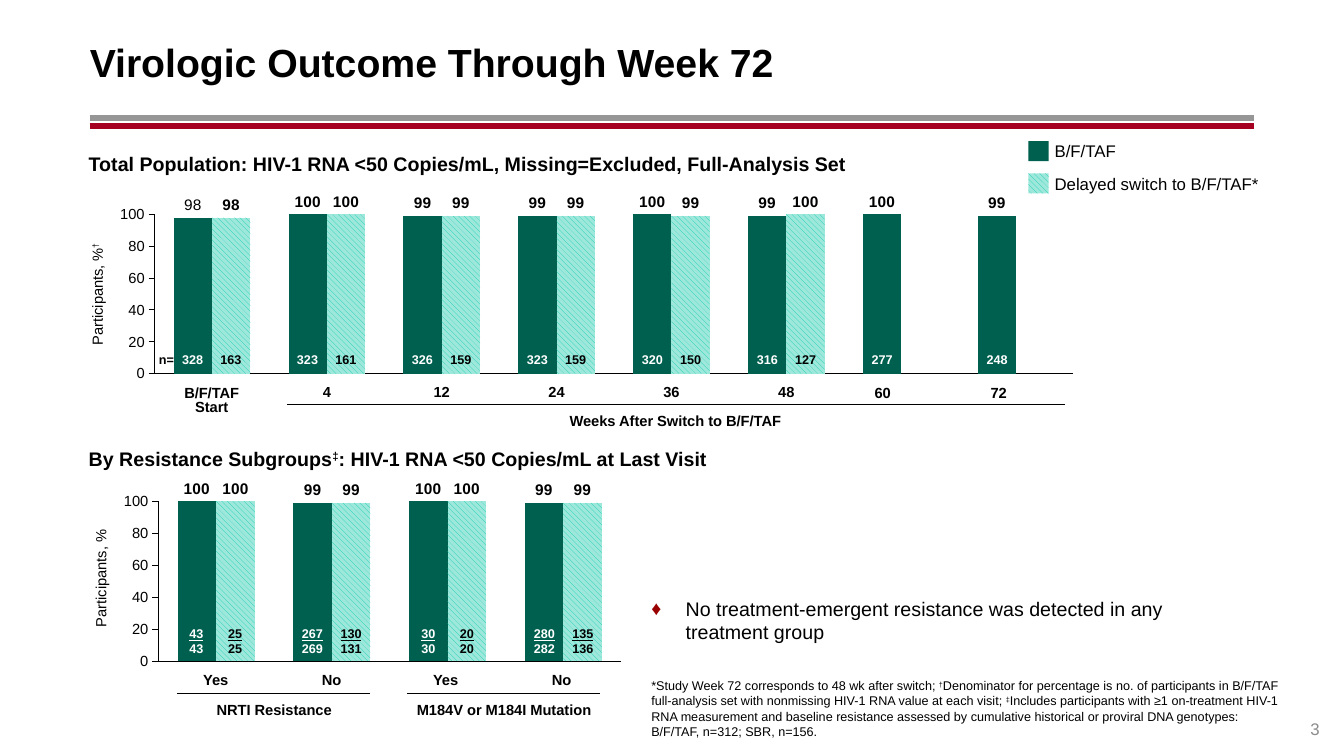
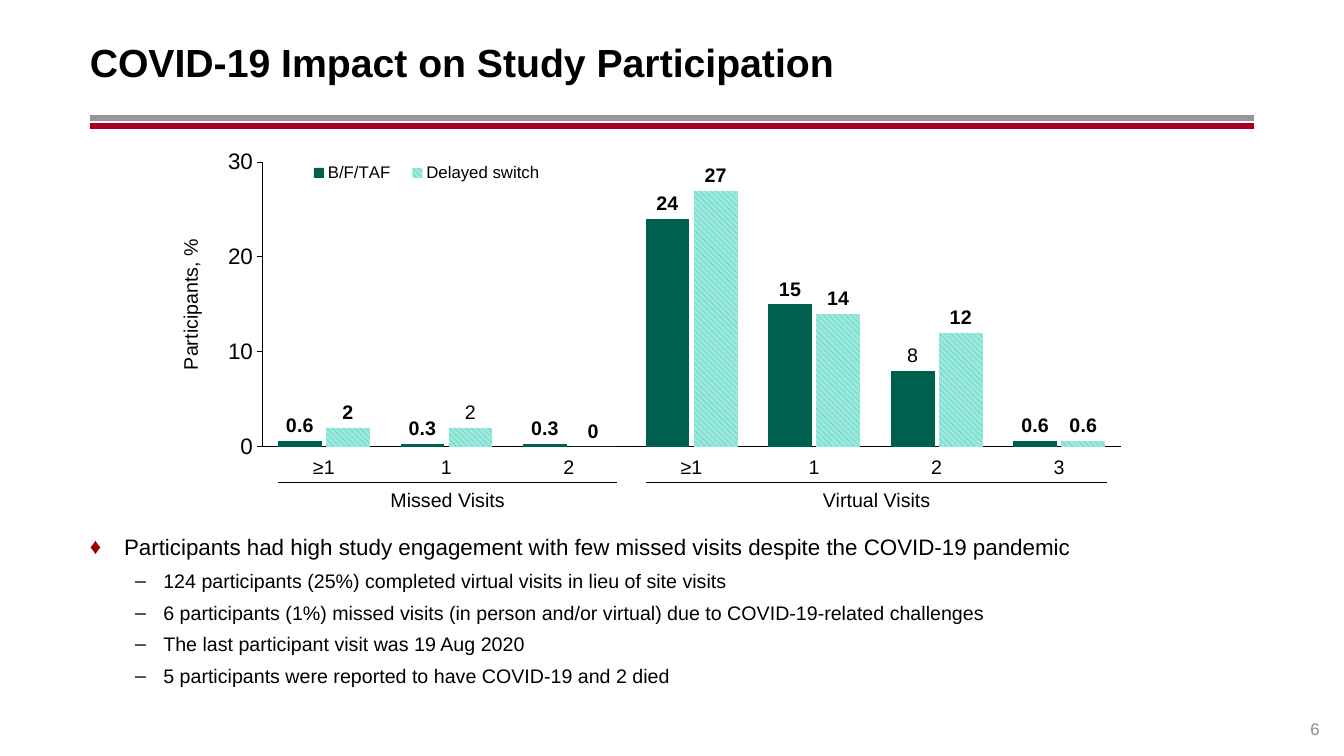
from itertools import groupby

from lxml import etree
from pptx import Presentation
from pptx.chart.data import CategoryChartData
from pptx.dml.color import RGBColor
from pptx.enum.chart import XL_CHART_TYPE, XL_LABEL_POSITION, XL_LEGEND_POSITION
from pptx.enum.chart import XL_TICK_LABEL_POSITION, XL_TICK_MARK
from pptx.enum.dml import MSO_PATTERN
from pptx.enum.shapes import MSO_CONNECTOR, MSO_SHAPE
from pptx.enum.text import MSO_ANCHOR, MSO_AUTO_SIZE, PP_ALIGN
from pptx.oxml.ns import qn
from pptx.util import Inches, Pt

LEFT, CENTER, RIGHT = PP_ALIGN.LEFT, PP_ALIGN.CENTER, PP_ALIGN.RIGHT
TOP, MIDDLE, BOTTOM = MSO_ANCHOR.TOP, MSO_ANCHOR.MIDDLE, MSO_ANCHOR.BOTTOM
HATCH = MSO_PATTERN.WIDE_DOWNWARD_DIAGONAL
COLUMNS, OUTSIDE_END = XL_CHART_TYPE.COLUMN_CLUSTERED, XL_LABEL_POSITION.OUTSIDE_END
LABELS_LOW, LABELS_OFF = XL_TICK_LABEL_POSITION.LOW, XL_TICK_LABEL_POSITION.NONE
TICK_OUT, TICK_OFF = XL_TICK_MARK.OUTSIDE, XL_TICK_MARK.NONE

FONT = "Arial"
COLORS = {
    "ink": "000000", "paper": "FFFFFF", "gray": "969696", "red": "A50021", "number": "8C8C8C",
    "bullet": "990000", "green": "006050", "mint": "9DE7DB", "stripe": "0CCEAE",
}
SUPERSCRIPTS = "†‡"


def color(name):
    return RGBColor.from_string(COLORS[name])


def style_font(font, size, bold=False, ink="ink"):
    font.name, font.size, font.bold = FONT, Pt(size), bold
    font.color.rgb = color(ink)


def paint(fill, name):
    """Fill with a named colour, or with mint stripes for "hatch"."""
    if name == "hatch":
        fill.patterned()
        fill.pattern = HATCH
        fill.fore_color.rgb, fill.back_color.rgb = color("stripe"), color("mint")
    else:
        fill.solid()
        fill.fore_color.rgb = color(name)


def write(frame, *lines, size=10.5, bold=False, ink="ink", align=LEFT, anchor=TOP, wrap=True,
          spacing=None, before=None):
    """Fill a text frame, one paragraph a line; daggers are raised."""
    frame.word_wrap, frame.vertical_anchor, frame.auto_size = wrap, anchor, MSO_AUTO_SIZE.NONE
    frame.margin_left = frame.margin_top = frame.margin_right = frame.margin_bottom = 0
    for index, line in enumerate(lines):
        para = frame.add_paragraph() if index else frame.paragraphs[0]
        para.alignment, para.line_spacing = align, spacing
        para.space_before = None if before is None else Pt(before)
        for raised, letters in groupby(line, key=lambda letter: letter in SUPERSCRIPTS):
            span = para.add_run()
            span.text = "".join(letters)
            style_font(span.font, size, bold, ink)
            if raised:
                span._r.get_or_add_rPr().set("baseline", "30000")


def add_bullet(para, mark, margin, hang, ink="ink"):
    properties = para._p.get_or_add_pPr()
    properties.set("marL", str(Inches(margin)))
    properties.set("indent", str(-Inches(hang)))
    tint = etree.SubElement(properties, qn("a:buClr"))
    etree.SubElement(tint, qn("a:srgbClr"), val=COLORS[ink])
    etree.SubElement(properties, qn("a:buFont"), typeface=FONT)
    etree.SubElement(properties, qn("a:buChar"), char=mark)


def place(element, index, area, inner=False):
    """Fix a plot area or legend at fractions of its chart."""
    for old in element.findall(qn("c:layout")):
        element.remove(old)
    layout = etree.Element(qn("c:layout"))
    manual = etree.SubElement(layout, qn("c:manualLayout"))
    if inner:
        etree.SubElement(manual, qn("c:layoutTarget"), val="inner")
    for tag in ("xMode", "yMode"):
        etree.SubElement(manual, qn("c:" + tag), val="edge")
    for tag, value in zip("xywh", area):
        etree.SubElement(manual, qn("c:" + tag), val=str(value))
    element.insert(index, layout)


class SlideBuilder:
    def __init__(self):
        self.deck = Presentation()
        self.deck.slide_width, self.deck.slide_height = Inches(13.33), Inches(7.5)
        self.page = None

    def new_page(self, title, number):
        self.page = self.deck.slides.add_slide(self.deck.slide_layouts[5])
        for top, name in ((1.17, "gray"), (1.25, "red")):
            self.rule(0.89, 12.44, top, name, 4.25)
        heading = self.page.shapes.title
        heading.left, heading.top = Inches(0.89), Inches(0.18)
        heading.width, heading.height = Inches(11.55), Inches(0.86)
        write(heading.text_frame, title, size=28, bold=True, anchor=MIDDLE)
        self.text(number, at=(12.44, 6.93, 0.65, 0.4), size=12, ink="number", align=RIGHT, anchor=BOTTOM)

    def rule(self, left, right, top, name="ink", width=0.75):
        ends = map(Inches, (left, top, right, top))
        line = self.page.shapes.add_connector(MSO_CONNECTOR.STRAIGHT, *ends)
        line.line.color.rgb, line.line.width = color(name), Pt(width)
        etree.SubElement(line._element.spPr, qn("a:effectLst"))

    def text(self, *lines, at, rotation=0, **style):
        box = self.page.shapes.add_textbox(*map(Inches, at))
        box.rotation = rotation
        write(box.text_frame, *lines, **style)
        return box.text_frame

    def caption(self, *lines, center, top, width=1, height=0.18, **style):
        at = (center - width / 2, top, width, height)
        return self.text(*lines, at=at, align=CENTER, anchor=MIDDLE, wrap=False, **style)

    def block(self, *lines, at, name="paper", **style):
        shape = self.page.shapes.add_shape(MSO_SHAPE.RECTANGLE, *map(Inches, at))
        shape.shadow.inherit = False
        shape.line.fill.background()
        paint(shape.fill, name)
        write(shape.text_frame, *lines, align=CENTER, wrap=False, **style)

    def counts(self, first, step, top, pairs):
        """Write the participant counts at the foot of each pair of bars."""
        for index, pair in enumerate(pairs):
            for side, ink, lines in zip((-1, 1), ("paper", "ink"), pair):
                frame = self.caption(*lines, center=first + step * index + side * step / 6, top=top,
                                     width=0.38, height=0.15 * len(lines), size=9, bold=True, ink=ink)
                frame.paragraphs[0].runs[0].font.underline = len(lines) > 1

    def chart(self, at, plot_area, categories, series, top_value, step, gap=100, overlap=0,
              label_size=11, label_format="#,##0", value_size=10.5, category_size=10.5,
              category_bold=False, category_labels=LABELS_LOW, category_offset=100,
              plain_labels=(), legend_area=None):
        data = CategoryChartData()
        data.categories = categories
        for name, values in series.items():
            data.add_series(name, values)
        chart = self.page.shapes.add_chart(COLUMNS, *map(Inches, at), data).chart
        style_font(chart.font, 10)
        chart.has_title, chart.has_legend = False, legend_area is not None
        if chart.has_legend:
            legend = chart.legend
            legend.position, legend.include_in_layout = XL_LEGEND_POSITION.BOTTOM, False
            style_font(legend.font, 12)
            place(legend._element, 1, legend_area)
        place(chart._chartSpace.chart.plotArea, 0, plot_area, inner=True)

        # Axes
        across, upward = chart.category_axis, chart.value_axis
        for axis, size, bold, tick in ((across, category_size, category_bold, TICK_OFF),
                                       (upward, value_size, False, TICK_OUT)):
            axis.has_major_gridlines = False
            axis.major_tick_mark, axis.minor_tick_mark = tick, TICK_OFF
            axis.format.line.color.rgb, axis.format.line.width = color("ink"), Pt(0.75)
            style_font(axis.tick_labels.font, size, bold)
        across.tick_label_position, across.tick_labels.offset = category_labels, category_offset
        upward.minimum_scale, upward.maximum_scale, upward.major_unit = 0, top_value, step

        # Columns and their labels
        plot = chart.plots[0]
        plot.gap_width, plot.overlap, plot.vary_by_categories = gap, overlap, False
        for columns, name in zip(plot.series, ("green", "hatch")):
            paint(columns.format.fill, name)
            labels = columns.data_labels
            labels.show_value, labels.position = True, OUTSIDE_END
            labels.number_format, labels.number_format_is_linked = label_format, False
            style_font(labels.font, label_size, True)
        for series_index, point, words in plain_labels:
            label = plot.series[series_index].points[point].data_label
            span = label.text_frame.paragraphs[0].add_run()
            span.text = words
            style_font(span.font, label_size)
            label.position = OUTSIDE_END


def outcome_page(build):
    build.new_page("Virologic Outcome Through Week 72", "3")

    # Total population
    build.text("Total Population: HIV-1 RNA <50 Copies/mL, Missing=Excluded, Full-Analysis Set",
               at=(0.88, 1.51, 9.58, 0.24), size=14, bold=True)
    build.chart((1.01, 1.79, 10.07, 2.18), (0.052, 0.156, 0.905, 0.732),
                ["0", "4", "12", "24", "36", "48", "60", "72"],
                {"Series 1": [98, 100, 99, 99, 100, 99, 100, 99],
                 "Series 2": [98, 100, 99, 99, 99, 100, None, None]},
                100, 20, category_bold=True, plain_labels=[(0, 0, "98")])
    build.text("Participants, %†", at=(0.3, 2.83, 1.33, 0.18), rotation=270, align=CENTER)
    build.block("B/F/TAF", "Start", at=(1.81, 3.76, 0.58, 0.36), bold=True, anchor=BOTTOM, spacing=0.8)
    for left, week in ((8.42, "60"), (9.57, "72")):
        build.block(week, at=(left, 3.8, 0.67, 0.18), bold=True, anchor=MIDDLE)
    build.caption("n=", center=1.65, top=3.49, width=0.15, height=0.15, size=9, bold=True)
    build.counts(2.1, 1.14, 3.49, [
        (["328"], ["163"]), (["323"], ["161"]), (["326"], ["159"]), (["323"], ["159"]),
        (["320"], ["150"]), (["316"], ["127"]), (["277"],), (["248"],)])
    build.rule(2.85, 10.56, 4.01)
    build.caption("Weeks After Switch to B/F/TAF", center=6.7, top=4.08, bold=True)

    # Legend
    for top, fill, name in ((1.4, "green", "B/F/TAF"), (1.72, "hatch", "Delayed switch to B/F/TAF*")):
        build.block(at=(10.2, top, 0.2, 0.2), name=fill)
        build.text(name, at=(10.46, top, 2.04, 0.2), size=12, anchor=MIDDLE, wrap=False)

    # Resistance subgroups
    build.text("By Resistance Subgroups‡: HIV-1 RNA <50 Copies/mL at Last Visit",
               at=(0.88, 4.43, 6.42, 0.24), size=14, bold=True, wrap=False)
    build.chart((0.99, 4.59, 10.36, 2.18), (0.056, 0.176, 0.443, 0.728), ["1", "2", "3", "4"],
                {"Series 1": [100, 99, 100, 99], "Series 2": [100, 99, 100, 99]},
                100, 20, category_labels=LABELS_OFF)
    build.text("Participants, %", at=(0.51, 5.65, 0.98, 0.18), rotation=270, align=CENTER, wrap=False)
    build.counts(2.14, 1.15, 6.21, [
        (["43", "43"], ["25", "25"]), (["267", "269"], ["130", "131"]),
        (["30", "30"], ["20", "20"]), (["280", "282"], ["135", "136"])])
    for left, group in ((1.76, "NRTI Resistance"), (4.04, "M184V or M184I Mutation")):
        for offset, answer in ((0.38, "Yes"), (1.53, "No")):
            build.caption(answer, center=left + offset, top=6.65, bold=True)
        build.rule(left, left + 1.91, 6.88)
        build.caption(group, center=left + 0.96, top=6.95, width=1.92, bold=True)

    # Finding and footnote
    finding = build.text("No treatment-emergent resistance was detected in any treatment group",
                         at=(6.46, 5.92, 5.79, 0.51), size=14, before=3)
    add_bullet(finding.paragraphs[0], "♦", 0.34, 0.34, "bullet")
    build.text("*Study Week 72 corresponds to 48 wk after switch; †Denominator for percentage is no. of "
               "participants in B/F/TAF full-analysis set with nonmissing HIV-1 RNA value at each visit; "
               "‡Includes participants with ≥1 on-treatment HIV-1 RNA measurement and baseline resistance "
               "assessed by cumulative historical or proviral DNA genotypes: B/F/TAF, n=312; SBR, n=156.",
               at=(6.46, 6.72, 6.29, 0.61), size=9, anchor=BOTTOM)


def participation_page(build):
    build.new_page("COVID-19 Impact on Study Participation", "6")

    # Missed and virtual visits
    build.chart((2.13, 1.43, 9.14, 3.57), (0.052, 0.05, 0.931, 0.791),
                ["≥1", "1", "2", "≥1", "1", "2", "3"],
                {"B/F/TAF": [0.6, 0.3, 0.3, 24, 15, 8, 0.6],
                 "Delayed switch": [2, 2, 0, 27, 14, 12, 0.6]},
                30, 10, gap=70, overlap=-10, label_size=14, label_format="[=0]0;[<1]0.0;0",
                value_size=16, category_size=14, category_offset=0,
                plain_labels=[(0, 5, "8"), (1, 1, "2")], legend_area=(0.09, 0.04, 0.28, 0.08))
    build.text("Participants, %", at=(1.13, 2.85, 1.51, 0.34), rotation=270, size=14,
               align=CENTER, anchor=MIDDLE, wrap=False)
    for left, right, group in ((2.76, 6.12, "Missed Visits"), (6.41, 10.98, "Virtual Visits")):
        build.rule(left, right, 4.79)
        build.caption(group, center=(left + right) / 2, top=4.79, width=1.34, height=0.34, size=14)

    # Findings
    findings = build.text(
        "Participants had high study engagement with few missed visits despite the COVID-19 pandemic",
        "124 participants (25%) completed virtual visits in lieu of site visits",
        "6 participants (1%) missed visits (in person and/or virtual) due to COVID-19-related challenges",
        "The last participant visit was 19 Aug 2020",
        "5 participants were reported to have COVID-19 and 2 died",
        at=(0.89, 5.29, 11.92, 1.43), size=14, before=6)
    lead, *details = findings.paragraphs
    lead.runs[0].font.size = Pt(16)
    add_bullet(lead, "♦", 0.34, 0.34, "bullet")
    for para in details:
        para.level = 1
        add_bullet(para, "–", 0.73, 0.28)


def main():
    build = SlideBuilder()
    outcome_page(build)
    participation_page(build)
    build.deck.save("out.pptx")


if __name__ == "__main__":
    main()
